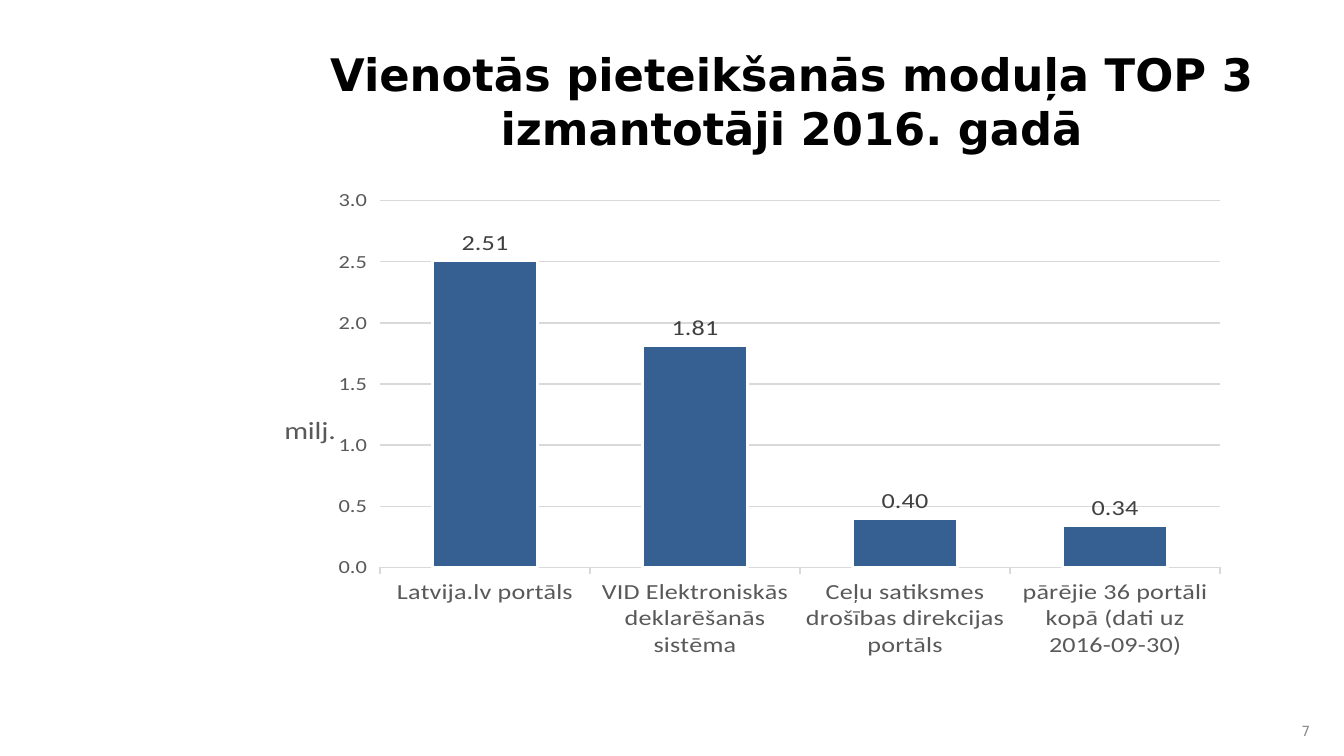
from dataclasses import dataclass

from lxml.etree import SubElement
from pptx import Presentation
from pptx.chart.data import CategoryChartData
from pptx.dml.color import RGBColor
from pptx.enum.chart import XL_CHART_TYPE, XL_LABEL_POSITION, XL_TICK_MARK
from pptx.enum.text import MSO_ANCHOR, PP_ALIGN
from pptx.oxml.ns import qn
from pptx.util import Emu, Pt

PX = 9525  # EMU per px, 96 px to the inch


@dataclass(frozen=True)
class Theme:
    heading_font: str = "DejaVu Sans"
    chart_font: str = "Calibri"
    black: str = "000000"
    page_grey: str = "8C8C8C"
    axis_grey: str = "595959"
    label_grey: str = "404040"
    grid_grey: str = "D9D9D9"
    bar_blue: str = "376092"
    white: str = "FFFFFF"
    title_size: float = 24
    page_size: float = 7.5
    unit_size: float = 16
    label_size: float = 14
    tick_size: float = 12
    chart_size: float = 10


def format_font(font, *, name, size, color, bold=False):
    font.name = name
    font.size = Pt(size)
    font.bold = bold
    font.color.rgb = RGBColor.from_string(color)


def write_text(frame, text, *, align, **font_format):
    """Put one formatted paragraph into a text frame."""
    frame.word_wrap = True
    frame.vertical_anchor = MSO_ANCHOR.MIDDLE
    frame.margin_left = frame.margin_right = 0
    frame.margin_top = frame.margin_bottom = 0
    paragraph = frame.paragraphs[0]
    paragraph.alignment = align
    run = paragraph.add_run()
    run.text = text
    format_font(run.font, **font_format)


def format_line(line, color, width):
    line.color.rgb = RGBColor.from_string(color)
    line.width = Pt(width)


def fill_layout(layout, **values):
    """Fill a chart layout element with a manual layout."""
    manual = SubElement(layout, qn("c:manualLayout"))
    for tag, value in values.items():
        SubElement(manual, qn(f"c:{tag}")).set("val", str(value))


class SlideBuilder:
    def __init__(self, presentation, theme):
        self.theme = theme
        self.slide = presentation.slides.add_slide(presentation.slide_layouts[5])

    def box(self, *lengths):
        return [Emu(length * PX) for length in lengths]

    def title(self, text, *place):
        shape = self.slide.shapes.title
        shape.left, shape.top, shape.width, shape.height = self.box(*place)
        write_text(shape.text_frame, text, align=PP_ALIGN.CENTER,
                   name=self.theme.heading_font, size=self.theme.title_size,
                   color=self.theme.black, bold=True)

    def page_number(self, text, *place):
        shape = self.slide.shapes.add_textbox(*self.box(*place))
        write_text(shape.text_frame, text, align=PP_ALIGN.RIGHT,
                   name=self.theme.heading_font, size=self.theme.page_size,
                   color=self.theme.page_grey)

    def column_chart(self, values, unit, *place):
        theme = self.theme
        data = CategoryChartData()
        data.categories = list(values)
        data.add_series("Series 1", list(values.values()))
        chart = self.slide.shapes.add_chart(
            XL_CHART_TYPE.COLUMN_CLUSTERED, *self.box(*place), data).chart
        chart.has_legend = False
        chart.has_title = False
        format_font(chart.font, name=theme.chart_font, size=theme.chart_size,
                    color=theme.black)
        self.axes(chart, unit)
        self.columns(chart.plots[0])

        # Inner plot area
        plot_area = chart.plots[0]._element.getparent()
        layout = plot_area.find(qn("c:layout"))
        if layout is None:
            layout = SubElement(plot_area, qn("c:layout"))
            plot_area.insert(0, layout)
        fill_layout(layout, layoutTarget="inner", xMode="edge", yMode="edge",
                    x=0.11, y=0.03, w=0.83, h=0.95)

    def axes(self, chart, unit):
        theme = self.theme
        category_axis, value_axis = chart.category_axis, chart.value_axis
        for axis, size in ((category_axis, theme.label_size),
                           (value_axis, theme.tick_size)):
            axis.major_tick_mark = XL_TICK_MARK.OUTSIDE
            axis.minor_tick_mark = XL_TICK_MARK.NONE
            format_font(axis.tick_labels.font, name=theme.chart_font,
                        size=size, color=theme.axis_grey)
        format_line(category_axis.format.line, theme.grid_grey, 0.75)

        value_axis.minimum_scale, value_axis.maximum_scale = 0, 3
        value_axis.major_unit = 0.5
        value_axis.tick_labels.number_format = "#,##0.0"
        value_axis.tick_labels.number_format_is_linked = False
        value_axis.format.line.fill.background()
        format_line(value_axis.major_gridlines.format.line, theme.grid_grey, 0.75)

        # Horizontal unit beside the value axis
        title = value_axis.axis_title
        frame = title.text_frame
        run = frame.paragraphs[0].add_run()
        run.text = unit
        format_font(run.font, name=theme.chart_font, size=theme.unit_size,
                    color=theme.axis_grey)
        body = frame._txBody.find(qn("a:bodyPr"))
        body.set("rot", "0")
        body.set("vert", "horz")
        layout = title._element.find(qn("c:layout"))
        if layout is None:
            layout = SubElement(title._element, qn("c:layout"))
            title._element.find(qn("c:tx")).addnext(layout)
        fill_layout(layout, xMode="edge", yMode="edge", x=0.01, y=0.57)

    def columns(self, plot):
        theme = self.theme
        plot.gap_width = 100
        plot.vary_by_categories = False
        series = plot.series[0]
        series.format.fill.solid()
        series.format.fill.fore_color.rgb = RGBColor.from_string(theme.bar_blue)
        format_line(series.format.line, theme.white, 1.5)
        labels = series.data_labels
        labels.show_value = True
        labels.position = XL_LABEL_POSITION.OUTSIDE_END
        labels.number_format = "#,##0.00"
        labels.number_format_is_linked = False
        format_font(labels.font, name=theme.chart_font, size=theme.label_size,
                    color=theme.label_grey)


def main():
    presentation = Presentation()
    presentation.slide_width = Emu(960 * PX)
    presentation.slide_height = Emu(540 * PX)
    builder = SlideBuilder(presentation, Theme())

    # Heading
    builder.title("Vienotās pieteikšanās moduļa TOP 3 izmantotāji 2016. gadā",
                  216, 30, 699, 84)

    # Sign-ins per portal, in millions
    sign_ins = {
        "Latvija.lv portāls": 2.51,
        "VID Elektroniskās deklarēšanās sistēma": 1.81,
        "Ceļu satiksmes drošības direkcijas portāls": 0.40,
        "pārējie 36 portāli kopā (dati uz 2016-09-30)": 0.34,
    }
    builder.column_chart(sign_ins, "milj.", 192, 135, 723, 335)

    # Page number
    builder.page_number("7", 904, 510, 32, 24)
    presentation.save("out.pptx")


if __name__ == "__main__":
    main()
